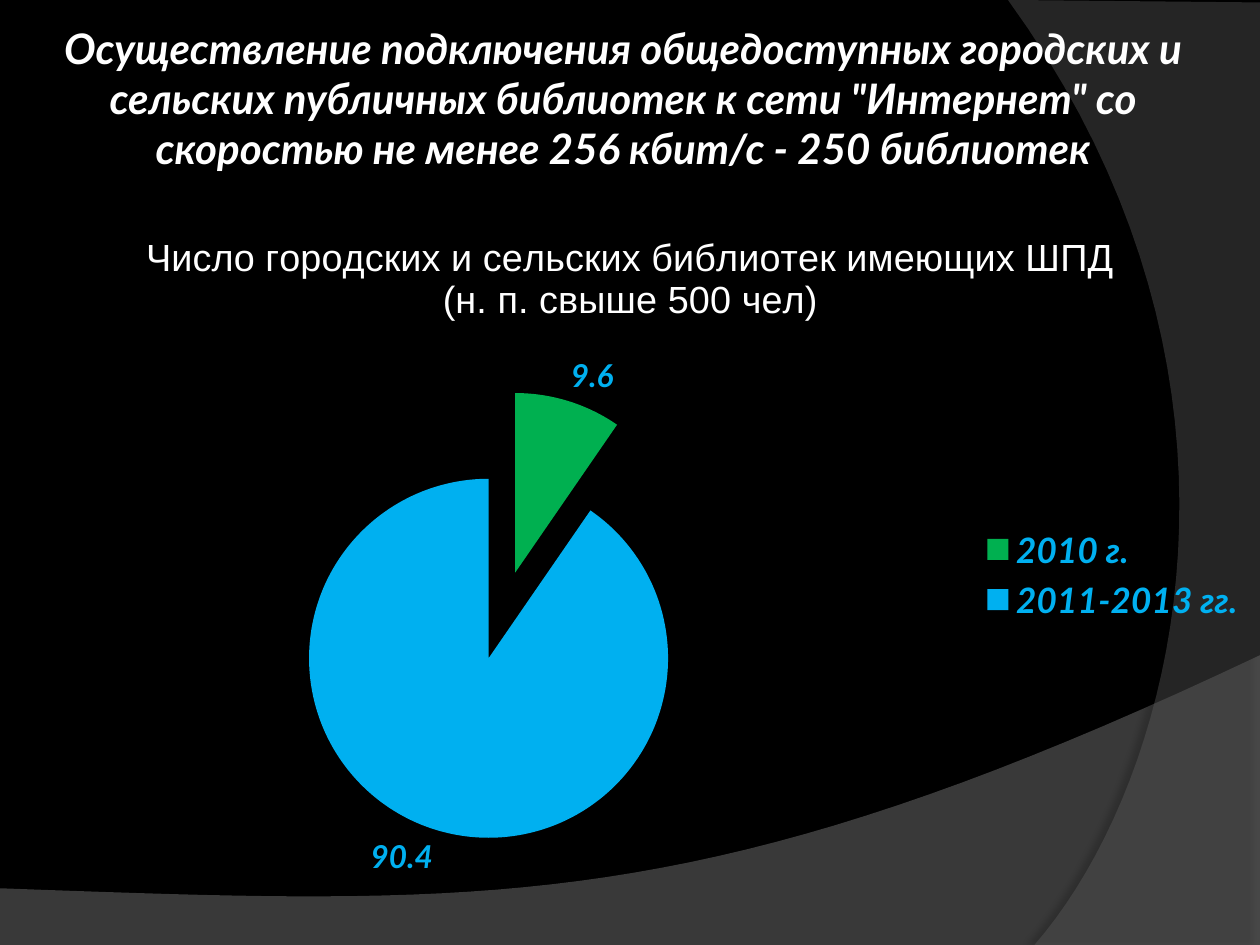
from dataclasses import dataclass

from lxml.etree import SubElement
from pptx import Presentation
from pptx.chart.data import CategoryChartData
from pptx.dml.color import RGBColor
from pptx.enum.chart import XL_CHART_TYPE as ChartType
from pptx.enum.chart import XL_LABEL_POSITION as LabelPosition
from pptx.enum.chart import XL_LEGEND_POSITION as LegendPosition
from pptx.enum.text import MSO_ANCHOR as Anchor
from pptx.enum.text import PP_ALIGN as Align
from pptx.oxml import parse_xml
from pptx.oxml.ns import nsdecls, qn
from pptx.util import Inches, Pt

Point = tuple[float, float]
CURVE_STEPS = 40
HEADING = ('Осуществление подключения общедоступных городских и сельских публичных '
           'библиотек к сети "Интернет" со скоростью не менее 256 кбит/с - 250 библиотек')
CHART_TITLE = "Число городских и сельских библиотек имеющих ШПД (н. п. cвыше 500 чел)"
HEADING_FONT = {"name": "Lato", "size": Pt(24), "bold": True, "italic": True}
CHART_FONT = {"name": "Arial", "size": Pt(18), "bold": False}
CHART_TITLE_FONT = {"name": "Arial", "size": Pt(21.6), "bold": False}
LEGEND_FONT = {"name": "Lato", "size": Pt(20), "bold": True, "italic": True}
LABEL_FONT = {"name": "Lato", "size": Pt(18), "bold": True, "italic": True}


@dataclass
class Slice:
    name: str
    value: float
    color: str
    explosion: int


@dataclass
class Wave:
    before: list[Point]
    curve: tuple[Point, Point, Point, Point]
    after: list[Point]
    color: str
    opacity: int
    shadow_opacity: int
    shadow_distance: float
    shadow_angle: int


SLICES = [Slice("2010 г.", 9.6, "00B050", 50), Slice("2011-2013 гг.", 90.4, "00B0F0", 0)]
WAVES = [
    Wave([(0, 7.05), (0, 7.51), (10, 7.51)],
         ((10, 5.2), (5.59, 7.29), (3.91, 7.19), (0, 7.05)), [],
         "7F7F7F", 45, 35, 3.5, 270),
    Wave([(10, 0.02), (10, 7.5)],
         ((8.21, 7.5), (9.35, 6.19), (10.18, 3), (8, 0)), [(10, 0.02)],
         "5E5E5E", 40, 45, 4, 180),
]


def rgb(color: str) -> RGBColor:
    return RGBColor.from_string(color)


def format_font(font, values: dict, color: str) -> None:
    for name, value in values.items():
        setattr(font, name, value)
    font.color.rgb = rgb(color)


def bezier(points: tuple[Point, Point, Point, Point]) -> list[Point]:
    result = []
    for step in range(CURVE_STEPS + 1):
        t = step / CURVE_STEPS
        weights = ((1 - t) ** 3, 3 * t * (1 - t) ** 2, 3 * t * t * (1 - t), t ** 3)
        result.append(tuple(sum(w * p[axis] for w, p in zip(weights, points))
                            for axis in (0, 1)))
    return result


def draw_wave(slide, wave: Wave) -> None:
    outline = [(Inches(x), Inches(y))
               for x, y in wave.before + bezier(wave.curve) + wave.after]
    builder = slide.shapes.build_freeform(*outline[0])
    builder.add_line_segments(outline[1:], close=True)
    shape = builder.convert_to_shape()
    shape.fill.solid()
    shape.fill.fore_color.rgb = rgb(wave.color)
    shape.line.fill.background()
    properties = shape.element.spPr
    fill_color = properties.find(qn("a:solidFill"))[0]
    SubElement(fill_color, qn("a:alpha"), val=str(wave.opacity * 1000))
    properties.append(parse_xml(
        f'<a:effectLst {nsdecls("a")}><a:outerShdw blurRad="{Pt(4)}" '
        f'dist="{Pt(wave.shadow_distance)}" dir="{wave.shadow_angle * 60000}" '
        f'algn="ctr" rotWithShape="0"><a:srgbClr val="000000">'
        f'<a:alpha val="{wave.shadow_opacity * 1000}"/></a:srgbClr>'
        f'</a:outerShdw></a:effectLst>'))


def draw_heading(slide) -> None:
    shape = slide.shapes.add_textbox(Inches(0.12), Inches(0), Inches(9.65), Inches(1.55))
    frame = shape.text_frame
    frame.word_wrap = True
    frame.vertical_anchor = Anchor.MIDDLE
    for side in ("left", "top", "right", "bottom"):
        setattr(frame, f"margin_{side}", Inches(0.05))
    paragraph = frame.paragraphs[0]
    paragraph.alignment = Align.CENTER
    run = paragraph.add_run()
    run.text = HEADING
    format_font(run.font, HEADING_FONT, "FFFFFF")


def draw_pie(slide) -> None:
    data = CategoryChartData()
    data.categories = [part.name for part in SLICES]
    data.add_series(CHART_TITLE, [part.value for part in SLICES])
    chart = slide.shapes.add_chart(ChartType.PIE, Inches(0.01), Inches(1.62),
                                   Inches(9.99), Inches(5.88), data).chart
    format_font(chart.font, CHART_FONT, "FFFFFF")
    chart.has_title = True
    title = chart.chart_title.text_frame
    title.text = CHART_TITLE
    format_font(title.paragraphs[0].runs[0].font, CHART_TITLE_FONT, "FFFFFF")
    chart.has_legend = True
    chart.legend.position = LegendPosition.RIGHT
    chart.legend.include_in_layout = False
    format_font(chart.legend.font, LEGEND_FONT, "00B0F0")

    plot = chart.plots[0]
    plot.vary_by_categories = True
    series = plot.series[0]
    for index, part in enumerate(SLICES):
        fill = series.points[index].format.fill
        fill.solid()
        fill.fore_color.rgb = rgb(part.color)
    for point, part in zip(series._element.findall(qn("c:dPt")), SLICES):
        point.find(qn("c:spPr")).addprevious(
            parse_xml(f'<c:explosion {nsdecls("c")} val="{part.explosion}"/>'))
    labels = series.data_labels
    labels.show_value = True
    labels.position = LabelPosition.OUTSIDE_END
    format_font(labels.font, LABEL_FONT, "00B0F0")


def main() -> None:
    presentation = Presentation()
    presentation.slide_width = Inches(10)
    presentation.slide_height = Inches(7.5)
    slide = presentation.slides.add_slide(presentation.slide_layouts[6])
    slide.background.fill.solid()
    slide.background.fill.fore_color.rgb = rgb("000000")
    for wave in WAVES:
        draw_wave(slide, wave)
    draw_heading(slide)
    draw_pie(slide)
    presentation.save("out.pptx")


if __name__ == "__main__":
    main()
